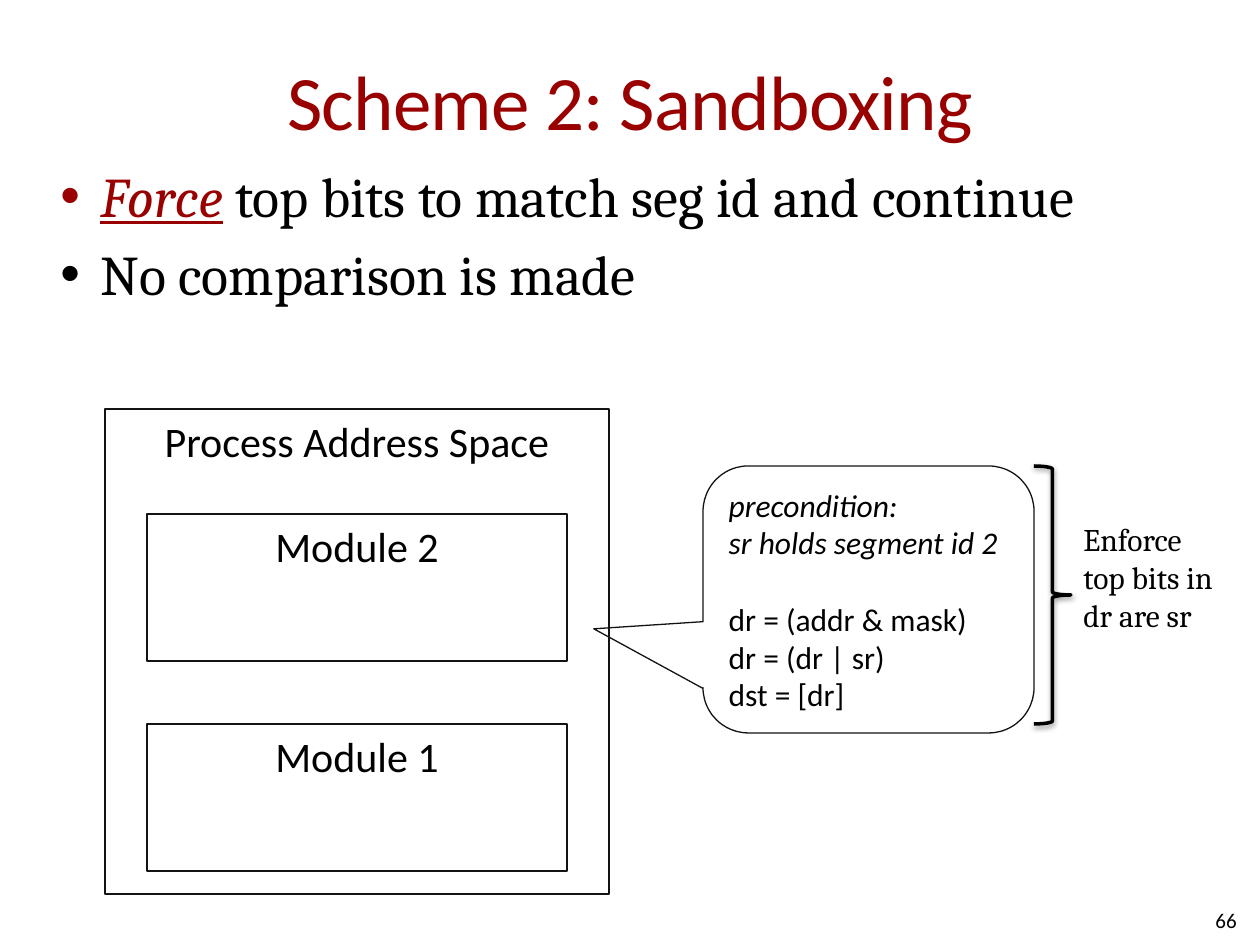
from pptx import Presentation
from pptx.dml.color import RGBColor
from pptx.enum.shapes import MSO_SHAPE
from pptx.enum.text import MSO_ANCHOR, PP_ALIGN
from pptx.oxml.ns import qn
from pptx.util import Pt
from lxml import etree

RECT = MSO_SHAPE.RECTANGLE
CALLOUT = MSO_SHAPE.ROUNDED_RECTANGULAR_CALLOUT
BRACE = MSO_SHAPE.RIGHT_BRACE
TOP, MIDDLE = MSO_ANCHOR.TOP, MSO_ANCHOR.MIDDLE
LEFT, CENTER, RIGHT = PP_ALIGN.LEFT, PP_ALIGN.CENTER, PP_ALIGN.RIGHT

EMU_PER_PX = 914400 / 126
RED, BLACK, OUTLINE = "990000", "000000", "131313"


def px(n):
    return round(n * EMU_PER_PX)


def color(hex_str):
    return RGBColor.from_string(hex_str)


def add_run(p, text, **fmt):
    """Add text in one format; newlines become line breaks."""
    runs = []
    for i, line in enumerate(text.split("\n")):
        if i:
            p.add_line_break()
        r = p.add_run()
        r.text = line
        r.font.color.rgb = color(fmt.get("color", BLACK))
        for name, value in fmt.items():
            if name != "color":
                setattr(r.font, name, value)
        runs.append(r)
    return runs


def set_frame(sp, anchor=TOP, align=LEFT):
    tf = sp.text_frame
    tf.word_wrap = True
    tf.vertical_anchor = anchor
    tf.paragraphs[0].alignment = align
    return tf


def add_textbox(s, box, anchor=TOP, align=LEFT):
    return set_frame(s.shapes.add_textbox(*map(px, box)), anchor, align)


def add_outline(s, kind, box, line=OUTLINE, width=0.75):
    sp = s.shapes.add_shape(kind, *map(px, box))
    sp.shadow.inherit = False
    sp.fill.background()
    sp.line.color.rgb = color(line)
    sp.line.width = Pt(width)
    return sp


def add_title(s, box):
    tf = add_textbox(s, box, MIDDLE, CENTER)
    tf.margin_left = tf.margin_right = 0
    for r in add_run(tf.paragraphs[0], "Scheme 2: Sandboxing",
                     name="Calibri", size=Pt(44), color=RED):
        r.font._element.set("spc", "-50")


def add_bullets(s, box):
    tf = add_textbox(s, box)
    plain = dict(name="Cambria", size=Pt(32))
    strong = dict(plain, color=RED, italic=True, underline=True)
    items = [
        [("Force", strong), (" top bits to match seg id and continue", plain)],
        [("No comparison is made", plain)],
    ]
    for i, item in enumerate(items):
        p = tf.add_paragraph() if i else tf.paragraphs[0]
        p.space_before = Pt(6.4)
        pPr = p._p.get_or_add_pPr()
        pPr.set("marL", str(px(40)))
        pPr.set("indent", str(-px(40)))
        etree.SubElement(pPr, qn("a:buFont"), typeface="Arial")
        etree.SubElement(pPr, qn("a:buChar"), char="•")
        for text, fmt in item:
            add_run(p, text, **fmt)


def add_callout(s, box):
    sp = add_outline(s, CALLOUT, box)
    for i, value in enumerate((-0.83, 0.11, 0.17)):
        sp.adjustments[i] = value
    tf = set_frame(sp, MIDDLE)
    fmt = dict(name="Calibri", size=Pt(18))
    add_run(tf.paragraphs[0], "precondition:\nsr holds segment id 2",
            italic=True, **fmt)
    p = tf.add_paragraph()
    p.alignment = LEFT
    p.space_before = Pt(22)
    add_run(p, "dr = (addr & mask)\ndr = (dr | sr)\ndst = [dr]", **fmt)


def add_address_space(s, box):
    x, y, w, h = box
    margin, module_h, pitch = 42, 147, 210
    blocks = [("Process Address Space", box)]
    for i, number in enumerate((2, 1)):
        blocks.append((f"Module {number}",
                       (x + margin, y + 105 + i * pitch,
                        w - 2 * margin, module_h)))
    for label, block in blocks:
        tf = set_frame(add_outline(s, RECT, block), align=CENTER)
        add_run(tf.paragraphs[0], label, name="Calibri", size=Pt(24))


def add_brace_note(s, box):
    x, y, w, h = box
    brace_w = 37
    # Note beside the brace
    tf = add_textbox(s, (x + brace_w, y + 48, w - brace_w, 127))
    add_run(tf.paragraphs[0], "Enforce\ntop bits in\ndr are sr",
            name="Cambria", size=Pt(18))
    # Brace with a soft shadow below
    sp = add_outline(s, BRACE, (x, y, brace_w, h), BLACK, 2)
    effects = sp._element.spPr.find(qn("a:effectLst"))
    shadow = etree.SubElement(effects, qn("a:outerShdw"), blurRad=str(Pt(3.1)),
                              dist=str(Pt(1.6)), dir="5400000", rotWithShape="0")
    tint = etree.SubElement(shadow, qn("a:srgbClr"), val=BLACK)
    etree.SubElement(tint, qn("a:alpha"), val="38000")


def add_page_number(s, box):
    tf = add_textbox(s, box, MIDDLE, RIGHT)
    add_run(tf.paragraphs[0], "66", name="Calibri", size=Pt(12))


def main():
    prs = Presentation()
    prs.slide_width, prs.slide_height = px(1260), px(945)
    s = prs.slides.add_slide(prs.slide_layouts[6])
    add_title(s, (63, 21, 1134, 158))
    add_bullets(s, (48, 155, 1171, 255))
    add_callout(s, (703, 466, 331, 267))
    add_page_number(s, (955, 895, 294, 50))
    add_address_space(s, (105, 409, 504, 485))
    add_brace_note(s, (1034, 466, 200, 258))
    prs.save("out.pptx")


if __name__ == "__main__":
    main()
